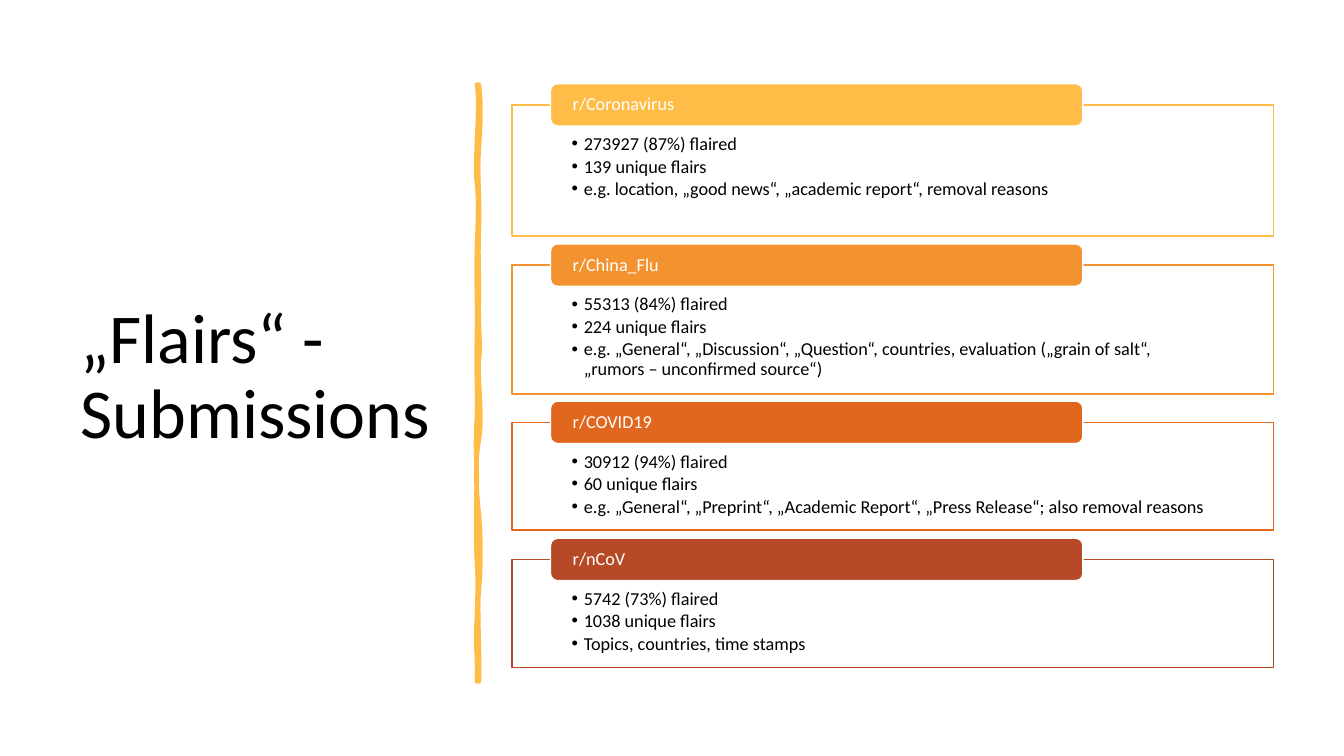
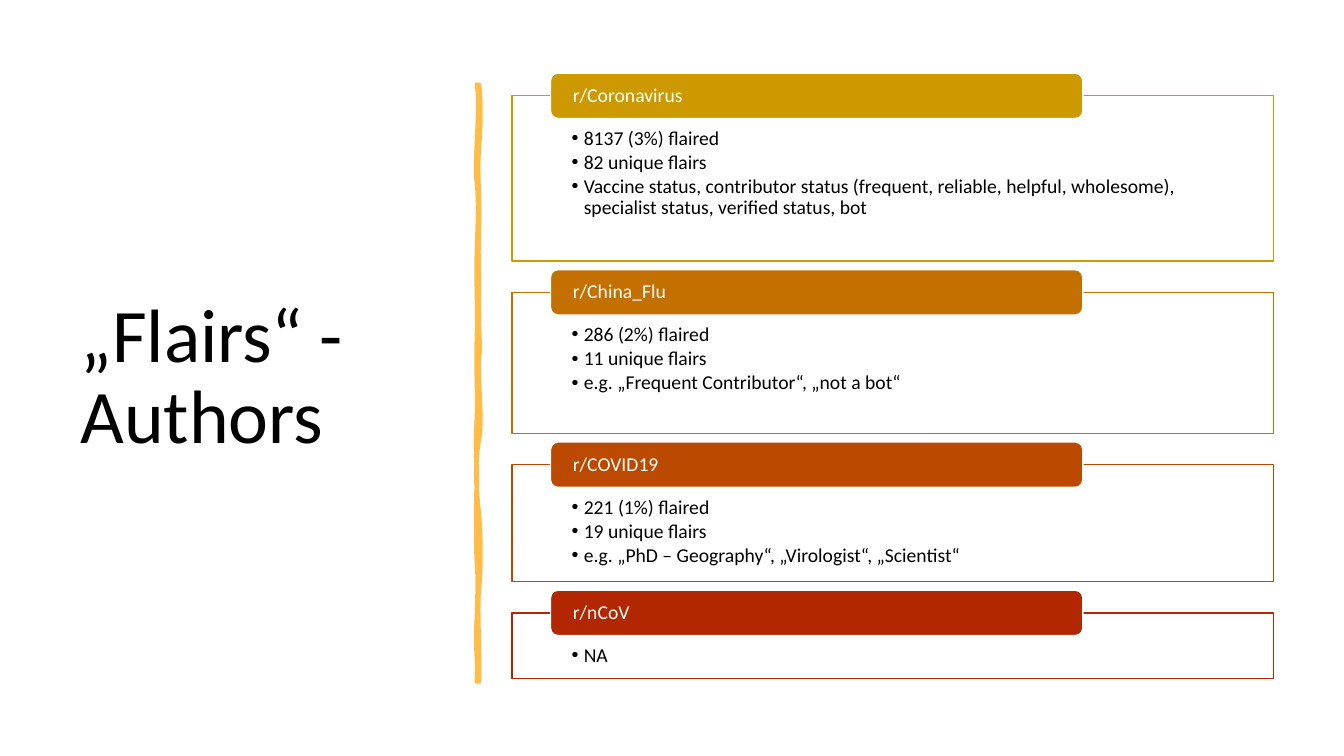
from pptx import Presentation
from pptx.dml.color import RGBColor
from pptx.enum.shapes import MSO_SHAPE
from pptx.enum.text import MSO_ANCHOR, PP_ALIGN
from pptx.oxml.ns import qn
from pptx.util import Inches, Pt
from lxml import etree

RECT, ROUND_RECT = MSO_SHAPE.RECTANGLE, MSO_SHAPE.ROUNDED_RECTANGLE
TOP, MIDDLE = MSO_ANCHOR.TOP, MSO_ANCHOR.MIDDLE
LEFT = PP_ALIGN.LEFT

FONT = "Calibri"
BLACK = RGBColor(0x00, 0x00, 0x00)
WHITE = RGBColor(0xFF, 0xFF, 0xFF)
AMBER = RGBColor(0xFF, 0xBD, 0x47)
ORANGE = RGBColor(0xF2, 0x93, 0x30)
PUMPKIN = RGBColor(0xE2, 0x67, 0x1E)
RUST = RGBColor(0xB6, 0x49, 0x26)
GOLD = RGBColor(0xCC, 0x99, 0x00)
OCHRE = RGBColor(0xC3, 0x70, 0x00)
BURNT = RGBColor(0xBB, 0x49, 0x00)
RED = RGBColor(0xB2, 0x26, 0x00)

TITLE_BOX = (0.7, 0.7, 3.74, 6.11)
LIST_LEFT, LIST_WIDTH = 5.08, 7.55
TAB_INDENT, TAB_WIDTH = 0.38, 5.28
BULLET_INDENT = 0.12

# Brush stroke: start point, then cubic curves (two controls and an end point)
STROKE_START = (4.75, 0.84)
STROKE_CURVES = [
    (4.77, 1.02, 4.77, 1.19, 4.75, 1.46),
    (4.73, 1.73, 4.76, 1.95, 4.75, 2.26),
    (4.74, 2.57, 4.75, 2.62, 4.75, 2.94),
    (4.74, 3.25, 4.77, 3.42, 4.75, 3.56),
    (4.73, 3.7, 4.79, 4.14, 4.75, 4.36),
    (4.71, 4.57, 4.72, 4.84, 4.75, 5.1),
    (4.77, 5.36, 4.77, 5.64, 4.75, 5.84),
    (4.73, 6.03, 4.76, 6.5, 4.75, 6.76),
    (4.74, 6.76, 4.73, 6.76, 4.73, 6.76),
    (4.74, 6.46, 4.71, 6.44, 4.73, 6.13),
    (4.74, 5.83, 4.74, 5.7, 4.73, 5.57),
    (4.72, 5.44, 4.72, 4.95, 4.73, 4.77),
    (4.73, 4.59, 4.71, 4.45, 4.73, 4.15),
    (4.74, 3.86, 4.72, 3.73, 4.73, 3.35),
    (4.74, 2.98, 4.72, 2.81, 4.73, 2.5),
    (4.74, 2.18, 4.75, 2, 4.73, 1.81),
    (4.7, 1.63, 4.77, 1.04, 4.73, 0.84),
]

# Each section: tab label, colour, frame top and height, bullets
SUBMISSIONS = [
    ("r/Coronavirus", AMBER, 1.04, 1.3, [
        "273927 (87%) flaired", "139 unique flairs",
        "e.g. location, „good news“, „academic report“, removal reasons"]),
    ("r/China_Flu", ORANGE, 2.63, 1.28, [
        "55313 (84%) flaired", "224 unique flairs",
        "e.g. „General“, „Discussion“, „Question“, countries, evaluation "
        "(„grain of salt“, „rumors – unconfirmed source“)"]),
    ("r/COVID19", PUMPKIN, 4.19, 1.07, [
        "30912 (94%) flaired", "60 unique flairs",
        "e.g. „General“, „Preprint“, „Academic Report“, „Press Release“; "
        "also removal reasons"]),
    ("r/nCoV", RUST, 5.55, 1.07, [
        "5742 (73%) flaired", "1038 unique flairs",
        "Topics, countries, time stamps"]),
]
AUTHORS = [
    ("r/Coronavirus", GOLD, 0.95, 1.64, [
        "8137 (3%) flaired", "82 unique flairs",
        "Vaccine status, contributor status (frequent, reliable, helpful, "
        "wholesome), specialist status, verified status, bot"]),
    ("r/China_Flu", OCHRE, 2.9, 1.4, [
        "286 (2%) flaired", "11 unique flairs",
        "e.g. „Frequent Contributor“, „not a bot“"]),
    ("r/COVID19", BURNT, 4.61, 1.16, [
        "221 (1%) flaired", "19 unique flairs",
        "e.g. „PhD – Geography“, „Virologist“, „Scientist“"]),
    ("r/nCoV", RED, 6.08, 0.65, ["NA"]),
]


def set_frame(tf, insets, anchor):
    tf.word_wrap = True
    tf.vertical_anchor = anchor
    tf.margin_left, tf.margin_top, tf.margin_right, tf.margin_bottom = map(Inches, insets)


def add_text(p, text, size, color):
    p.alignment = LEFT
    p.line_spacing = 0.9
    r = p.add_run()
    r.text = text
    r.font.name, r.font.size = FONT, Pt(size)
    r.font.color.rgb = color


def add_bullet(p):
    pPr = p._p.get_or_add_pPr()
    pPr.set("marL", str(Inches(BULLET_INDENT)))
    pPr.set("indent", str(-Inches(BULLET_INDENT)))
    etree.SubElement(pPr, qn("a:buFont")).set("typeface", "Arial")
    etree.SubElement(pPr, qn("a:buChar")).set("char", "•")


def paint(sp, fill, line, width):
    sp.shadow.inherit = False
    sp.fill.solid()
    sp.fill.fore_color.rgb = fill
    sp.line.color.rgb = line
    sp.line.width = Pt(width)


def add_title(slide, text, size):
    tf = slide.shapes.add_textbox(*map(Inches, TITLE_BOX)).text_frame
    set_frame(tf, (0.1, 0.05, 0.1, 0.05), MIDDLE)
    add_text(tf.paragraphs[0], text, size, BLACK)


def bend_segments(sp, curves):
    """Turn the straight segments of a freeform into cubic curves."""
    segments = list(sp._element.iter(qn("a:lnTo")))
    for segment, curve in zip(segments, curves):
        bend = etree.Element(qn("a:cubicBezTo"))
        for x, y in zip(curve[::2], curve[1::2]):
            pt = etree.SubElement(bend, qn("a:pt"))
            pt.set("x", str(Inches(x) - sp.left))
            pt.set("y", str(Inches(y) - sp.top))
        segment.getparent().replace(segment, bend)


def add_brush_stroke(slide):
    builder = slide.shapes.build_freeform(*map(Inches, STROKE_START))
    ends = [(Inches(curve[4]), Inches(curve[5])) for curve in STROKE_CURVES]
    builder.add_line_segments(ends, close=True)
    sp = builder.convert_to_shape()
    bend_segments(sp, STROKE_CURVES)
    paint(sp, AMBER, AMBER, 3.25)
    etree.SubElement(sp._element.spPr.find(qn("a:ln")), qn("a:round"))


def add_section(slide, tab_height, size, section):
    """Framed bullets with a coloured tab centred on the frame's top edge."""
    label, color, top, height, bullets = section
    frame = slide.shapes.add_shape(RECT, Inches(LIST_LEFT), Inches(top),
                                   Inches(LIST_WIDTH), Inches(height))
    paint(frame, WHITE, color, 1)
    tf = frame.text_frame
    set_frame(tf, (0.59, 0.023 * size, 0.59, 0.1), TOP)
    for i, bullet in enumerate(bullets):
        p = tf.add_paragraph() if i else tf.paragraphs[0]
        add_text(p, bullet, size, BLACK)
        p.space_after = Pt(0.15 * size)
        add_bullet(p)

    tab = slide.shapes.add_shape(ROUND_RECT, Inches(LIST_LEFT + TAB_INDENT),
                                 Inches(top - tab_height / 2),
                                 Inches(TAB_WIDTH), Inches(tab_height))
    paint(tab, color, WHITE, 1)
    set_frame(tab.text_frame, (0.2, 0, 0.2, 0), MIDDLE)
    add_text(tab.text_frame.paragraphs[0], label, size, WHITE)


def add_flair_slide(prs, title, title_size, tab_height, size, sections):
    slide = prs.slides.add_slide(prs.slide_layouts[6])
    add_title(slide, title, title_size)
    add_brush_stroke(slide)
    for section in sections:
        add_section(slide, tab_height, size, section)


def main():
    prs = Presentation()
    prs.slide_width, prs.slide_height = Inches(13.33), Inches(7.5)
    add_flair_slide(prs, "„Flairs“ - Submissions", 50, 0.42, 13, SUBMISSIONS)
    add_flair_slide(prs, "„Flairs“ - Authors", 54, 0.45, 14, AUTHORS)
    prs.save("out.pptx")


if __name__ == "__main__":
    main()
